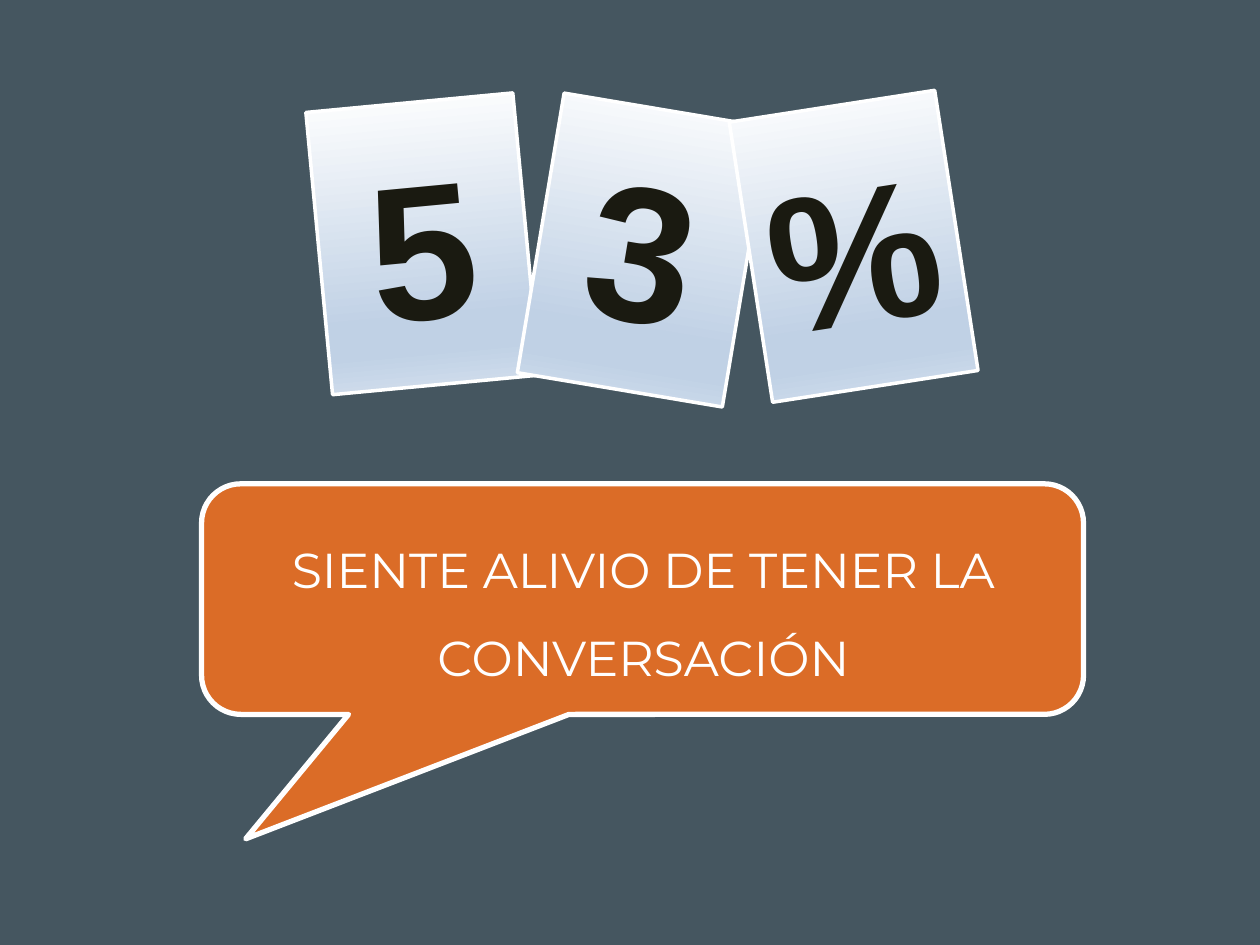
from lxml import etree
from pptx import Presentation
from pptx.dml.color import RGBColor
from pptx.enum.shapes import MSO_SHAPE as SHAPE
from pptx.enum.text import MSO_AUTO_SIZE as FIT, PP_ALIGN as ALIGN
from pptx.oxml.ns import qn
from pptx.util import Inches, Pt

SLATE = RGBColor(0x45, 0x56, 0x60)
WHITE = RGBColor(0xFF, 0xFF, 0xFF)
BLUE = RGBColor(0xC0, 0xD1, 0xE5)
PALE = RGBColor(0xD5, 0xE0, 0xEE)
INK = RGBColor(0x1A, 0x1A, 0x11)
ORANGE = RGBColor(0xDB, 0x6C, 0x27)

STOPS = [(0, WHITE), (74, BLUE), (83, BLUE), (100, PALE)]
DIGIT = {"name": "Arial", "size": Pt(110), "bold": True}
QUOTE = {"name": "Montserrat", "size": Pt(28), "bold": False}

deck = Presentation()
deck.slide_width, deck.slide_height = Inches(10), Inches(7.5)
slide = deck.slides.add_slide(deck.slide_layouts[6])
slide.background.fill.solid()
slide.background.fill.fore_color.rgb = SLATE


def add_panel(kind, box, width):
    panel = slide.shapes.add_shape(kind, *map(Inches, box))
    panel.shadow.inherit = False
    panel.line.color.rgb = WHITE
    panel.line.width = Pt(width)
    return panel


def add_label(text, box, style, color, space=1.0):
    label = slide.shapes.add_textbox(*map(Inches, box))
    frame = label.text_frame
    frame.word_wrap = True
    frame.auto_size = FIT.SHAPE_TO_FIT_TEXT
    para = frame.paragraphs[0]
    para.alignment = ALIGN.CENTER
    para.line_spacing = space
    run = para.add_run()
    run.text = text
    for key, value in style.items():
        setattr(run.font, key, value)
    run.font.color.rgb = color
    return label


for text, left, top, drop, turn in [
    ("5", 2.53, 0.81, 0.15, -5.4),
    ("3", 4.28, 0.86, 0.12, 9.5),
    ("%", 5.95, 0.83, 0.17, -8.8),
]:
    card = add_panel(SHAPE.RECTANGLE, (left, top, 1.65, 2.25), 2)
    card.fill.gradient()
    card.fill.gradient_angle = 270
    stops = next(card._element.spPr.iter(qn("a:gsLst")))
    for old in list(stops):
        stops.remove(old)
    for pos, color in STOPS:
        stop = etree.SubElement(stops, qn("a:gs"), pos=str(pos * 1000))
        etree.SubElement(stop, qn("a:srgbClr"), val=str(color))
    card.rotation = turn
    label = add_label(text, (left, top + drop, 1.65, 1.95), DIGIT, INK)
    label.rotation = turn

bubble = add_panel(SHAPE.ROUNDED_RECTANGULAR_CALLOUT, (1.6, 3.84, 7, 1.83), 3)
bubble.fill.solid()
bubble.fill.fore_color.rgb = ORANGE
for i, value in enumerate([-0.45, 1.04, 0.17]):
    bubble.adjustments[i] = value
add_label("SIENTE ALIVIO DE TENER LA CONVERSACIÓN", (1.69, 4, 6.83, 1.44), QUOTE, WHITE, 1.5)

deck.save("out.pptx")
